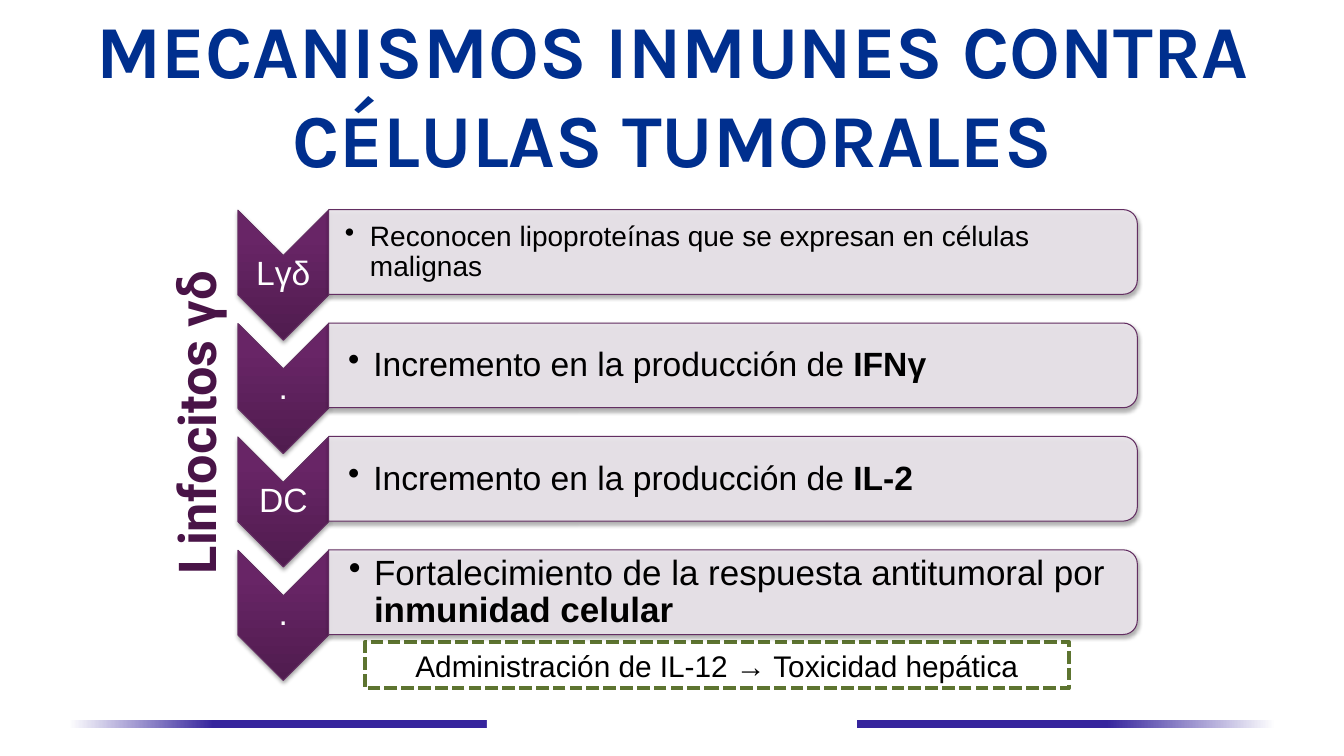
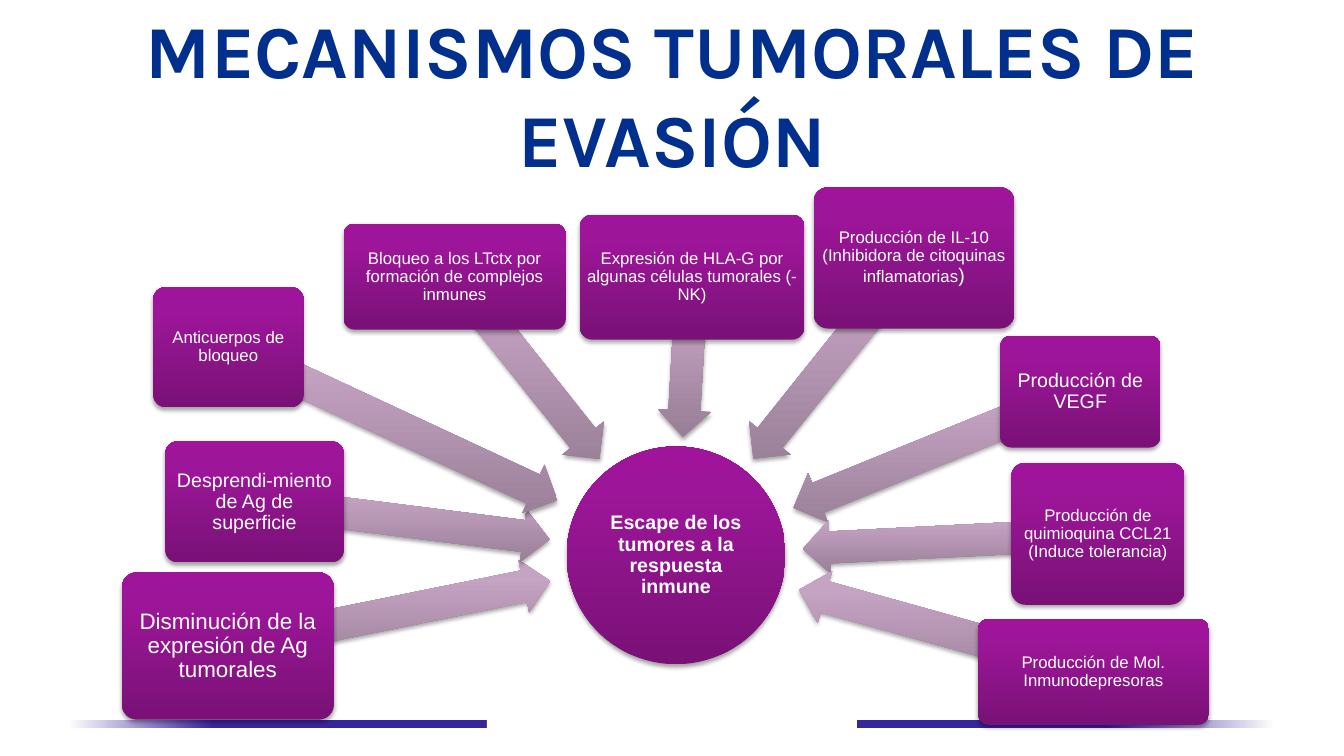
from math import atan2, cos, degrees, sin

from lxml.etree import SubElement
from pptx import Presentation
from pptx.dml.color import RGBColor
from pptx.enum.dml import MSO_LINE
from pptx.enum.shapes import MSO_SHAPE as Preset
from pptx.enum.text import MSO_ANCHOR as Anchor, PP_ALIGN as Align
from pptx.oxml.ns import qn
from pptx.util import Inches, Pt

WHITE = RGBColor(0xFF, 0xFF, 0xFF)
BLACK = RGBColor(0x00, 0x00, 0x00)
TITLE_BLUE = RGBColor(0x00, 0x2F, 0x8E)
TITLE_EDGE = RGBColor(0xFD, 0xFC, 0xFD)
BAND_BLUE = RGBColor(0x36, 0x25, 0x9D)
PLUM = RGBColor(0x49, 0x14, 0x47)
PLUM_LINE = RGBColor(0x63, 0x2E, 0x62)
BAR_FILL = RGBColor(0xEA, 0xE5, 0xEB)
OLIVE = RGBColor(0x5D, 0x74, 0x30)

BAND_STOPS = [(0, WHITE), (12, BAND_BLUE), (86, BAND_BLUE), (100, WHITE)]
CHEVRON_STOPS = [(0, RGBColor(0x50, 0x1C, 0x4F)), (80, RGBColor(0x68, 0x25, 0x66)),
                 (100, RGBColor(0x69, 0x24, 0x68))]
NODE_STOPS = [(0, RGBColor(0x79, 0x11, 0x76)), (80, RGBColor(0x9D, 0x16, 0x99)),
              (100, RGBColor(0xA0, 0x14, 0x9C))]
ARROW_STOPS = [(0, RGBColor(0x98, 0x7E, 0x96)), (80, RGBColor(0xC5, 0xA3, 0xC3)),
               (100, RGBColor(0xC6, 0xA4, 0xC5))]

# Text parts are (text, font overrides); box sizes are left, top, width, height
LYMPHOCYTE_ROWS = [
    ("Lγδ", 20, [("Reconocen lipoproteínas que se expresan en células malignas", {})]),
    (".", 24, [("Incremento en la producción de ", {}), ("IFNγ", {"bold": True})]),
    ("DC", 24, [("Incremento en la producción de ", {}), ("IL-2", {"bold": True})]),
    (".", 25, [("Fortalecimiento de la respuesta antitumoral por ", {}),
               ("inmunidad celular", {"bold": True})]),
]
# Each factor: box, arrow length, text size, text parts
EVASION_FACTORS = [
    ((1.21, 5.68, 2.1, 1.46), 3.26, 16, [("Disminución de la expresión de Ag tumorales", {})]),
    ((1.64, 4.38, 1.77, 1.2), 2.95, 14, [("Desprendi-miento de Ag de superficie", {})]),
    ((1.52, 2.85, 1.49, 1.19), 3.6, 12, [("Anticuerpos de bloqueo", {})]),
    ((3.41, 2.22, 2.2, 1.05), 2.31, 12,
     [("Bloqueo a los LTctx por formación de complejos inmunes", {})]),
    ((5.75, 2.13, 2.23, 1.24), 1.59, 12,
     [("Expresión de HLA-G por algunas células tumorales (-NK)", {})]),
    ((8.07, 1.86, 1.99, 1.4), 2.55, 12,
     [("Producción de IL-10 (Inhibidora de citoquinas inflamatorias", {}),
      (")", {"size": Pt(14)})]),
    ((9.92, 3.33, 1.59, 1.11), 3.07, 14, [("Producción de VEGF", {})]),
    ((10.03, 4.59, 1.72, 1.41), 2.93, 12,
     [("Producción de quimioquina CCL21 (Induce tolerancia)", {})]),
    ((9.7, 6.14, 2.29, 1.05), 3.03, 12, [("Producción de Mol. Inmunodepresoras", {})]),
]


def add_preset(slide, preset, box, rotation=0):
    shape = slide.shapes.add_shape(preset, *map(Inches, box))
    shape.rotation = rotation
    shape.shadow.inherit = False
    shape.line.fill.background()
    return shape


def add_centred(slide, preset, centre, size, rotation=0):
    box = (centre[0] - size[0] / 2, centre[1] - size[1] / 2, *size)
    return add_preset(slide, preset, box, rotation)


def fill_solid(shape, color):
    shape.fill.solid()
    shape.fill.fore_color.rgb = color


def fill_gradient(shape, stops, angle=90):
    shape.fill.gradient()
    shape.fill.gradient_angle = angle
    gradient = shape._element.spPr.find(qn("a:gradFill"))
    gradient.set("rotWithShape", "0")
    stop_list = gradient.find(qn("a:gsLst"))
    for old_stop in list(stop_list):
        stop_list.remove(old_stop)
    for position, color in stops:
        stop = SubElement(stop_list, qn("a:gs"), pos=str(position * 1000))
        SubElement(stop, qn("a:srgbClr"), val=str(color))


def outline(shape, color, width):
    shape.line.color.rgb = color
    shape.line.width = Pt(width)


def cast_shadow(shape):
    effects = shape._element.spPr.find(qn("a:effectLst"))
    shadow = SubElement(effects, qn("a:outerShdw"), blurRad=str(Pt(3.1)), dist=str(Pt(1.8)),
                        dir="5400000", rotWithShape="0")
    color = SubElement(shadow, qn("a:srgbClr"), val="000000")
    SubElement(color, qn("a:alpha"), val="35000")


def write(shape, parts, size, color, font="Arial", bold=False, align=Align.CENTER,
          anchor=Anchor.MIDDLE, insets=(0.1, 0.05, 0.1, 0.05), spacing=None, bullet=False):
    frame = shape.text_frame
    frame.word_wrap = True
    frame.vertical_anchor = anchor
    (frame.margin_left, frame.margin_top,
     frame.margin_right, frame.margin_bottom) = map(Inches, insets)
    paragraph = frame.paragraphs[0]
    paragraph.alignment = align
    if spacing:
        paragraph.line_spacing = spacing
    if bullet:
        properties = paragraph._p.get_or_add_pPr()
        properties.set("marL", str(Inches(0.25)))
        properties.set("indent", str(Inches(-0.25)))
        SubElement(properties, qn("a:buChar"), char="•")
    paragraph.font.name = font
    paragraph.font.size = Pt(size)
    paragraph.font.bold = bold
    paragraph.font.color.rgb = color
    for text, overrides in parts:
        run = paragraph.add_run()
        run.text = text
        for name, value in overrides.items():
            setattr(run.font, name, value)
    return paragraph


def add_text(slide, box, *args, **style):
    text_box = slide.shapes.add_textbox(*map(Inches, box))
    return text_box, write(text_box, *args, **style)


def add_band(slide):
    # Gradient line along the foot, open in the middle
    fill_gradient(add_preset(slide, Preset.RECTANGLE, (0.68, 7.14, 11.97, 0.08)), BAND_STOPS, 0)
    fill_solid(add_preset(slide, Preset.RECTANGLE, (4.83, 6.98, 3.67, 0.39)), WHITE)


def add_title(slide, title):
    _, paragraph = add_text(slide, (0.67, 0.3, 12, 1.25), [(title, {})], 53.3, TITLE_BLUE,
                            font="Karla", bold=True)
    edge = SubElement(paragraph.runs[0]._r.get_or_add_rPr(), qn("a:ln"), w=str(Pt(1.4)))
    SubElement(SubElement(edge, qn("a:solidFill")), qn("a:srgbClr"), val=str(TITLE_EDGE))


def add_chevron_row(slide, left, top, label, size, parts):
    # Chevron and its label
    chevron = add_centred(slide, Preset.CHEVRON, (left + 0.45, top + 0.65), (1.29, 0.9), 90)
    fill_gradient(chevron, CHEVRON_STOPS)
    add_text(slide, (left, top + 0.45, 0.9, 0.39), [(label, {})], 24, WHITE,
             insets=(0.02,) * 4, spacing=0.9)
    # Bar and its bullet
    bar = add_centred(slide, Preset.ROUND_2_SAME_RECTANGLE, (left + 4.91, top + 0.42),
                      (0.84, 8.02), 90)
    fill_solid(bar, BAR_FILL)
    bar_color = bar._element.spPr.find(qn("a:solidFill"))[0]
    SubElement(bar_color, qn("a:alpha"), val="90000")
    for shape in (chevron, bar):
        outline(shape, PLUM_LINE, 0.75)
        cast_shadow(shape)
    add_text(slide, (left + 0.9, top + 0.05, 7.98, 0.75), parts, size, BLACK, align=Align.LEFT,
             insets=(size * 0.008, 0.02, 0.02, 0.02), spacing=0.9, bullet=True)


def add_chevron_list(slide, left, top, rows, pitch=1.125):
    for index, row in enumerate(rows):
        add_chevron_row(slide, left, top + index * pitch, *row)


def add_node(slide, preset, box, size, parts, inset, bold=False):
    node = add_preset(slide, preset, box)
    if preset == Preset.ROUNDED_RECTANGLE:
        node.adjustments[0] = 0.1
    fill_gradient(node, NODE_STOPS)
    cast_shadow(node)
    write(node, parts, size, WHITE, bold=bold, insets=(inset,) * 4, spacing=0.9)


def add_inward_arrow(slide, start, target, length):
    angle = atan2(target[1] - start[1], target[0] - start[0])
    middle = (start[0] + cos(angle) * length / 2, start[1] + sin(angle) * length / 2)
    arrow = add_centred(slide, Preset.LEFT_ARROW, middle, (length, 0.53), degrees(angle) + 180)
    arrow.adjustments[0] = 0.6
    arrow.adjustments[1] = 0.5
    fill_gradient(arrow, ARROW_STOPS)
    cast_shadow(arrow)


def add_radial_diagram(slide, hub_box, hub_text, factors):
    left, top, width, height = hub_box
    hub_centre = (left + width / 2, top + height / 2)
    add_node(slide, Preset.OVAL, hub_box, 14, [(hub_text, {})], 0.01, bold=True)
    for box, length, size, parts in factors:
        box_centre = (box[0] + box[2] / 2, box[1] + box[3] / 2)
        add_inward_arrow(slide, box_centre, hub_centre, length)
        add_node(slide, Preset.ROUNDED_RECTANGLE, box, size, parts, 0.03)


def build_immune_slide(slide):
    add_band(slide)
    add_title(slide, "MECANISMOS INMUNES CONTRA CÉLULAS TUMORALES")
    # Upright heading
    heading, _ = add_text(slide, (-0.87, 2.62, 5.62, 0.73), [("Linfocitos γδ", {})], 37.3, PLUM,
                          font="Roboto", bold=True, align=Align.LEFT, anchor=Anchor.TOP)
    heading.rotation = 270
    # Dashed warning
    warning = add_preset(slide, Preset.RECTANGLE, (3.62, 6.37, 6.98, 0.46))
    fill_solid(warning, WHITE)
    outline(warning, OLIVE, 3)
    warning.line.dash_style = MSO_LINE.SQUARE_DOT
    write(warning, [("Administración de IL-12 → Toxicidad hepática", {})], 21.3, BLACK)
    add_chevron_list(slide, 2.36, 2.08, LYMPHOCYTE_ROWS)


def build_evasion_slide(slide):
    add_band(slide)
    add_radial_diagram(slide, (5.62, 4.43, 2.17, 2.16),
                       "Escape de los tumores a la respuesta inmune", EVASION_FACTORS)
    add_title(slide, "MECANISMOS TUMORALES DE EVASIÓN")


def main():
    presentation = Presentation()
    presentation.slide_width = Inches(13.33)
    presentation.slide_height = Inches(7.5)
    for build in (build_immune_slide, build_evasion_slide):
        build(presentation.slides.add_slide(presentation.slide_layouts[6]))
    presentation.save("out.pptx")


if __name__ == "__main__":
    main()
